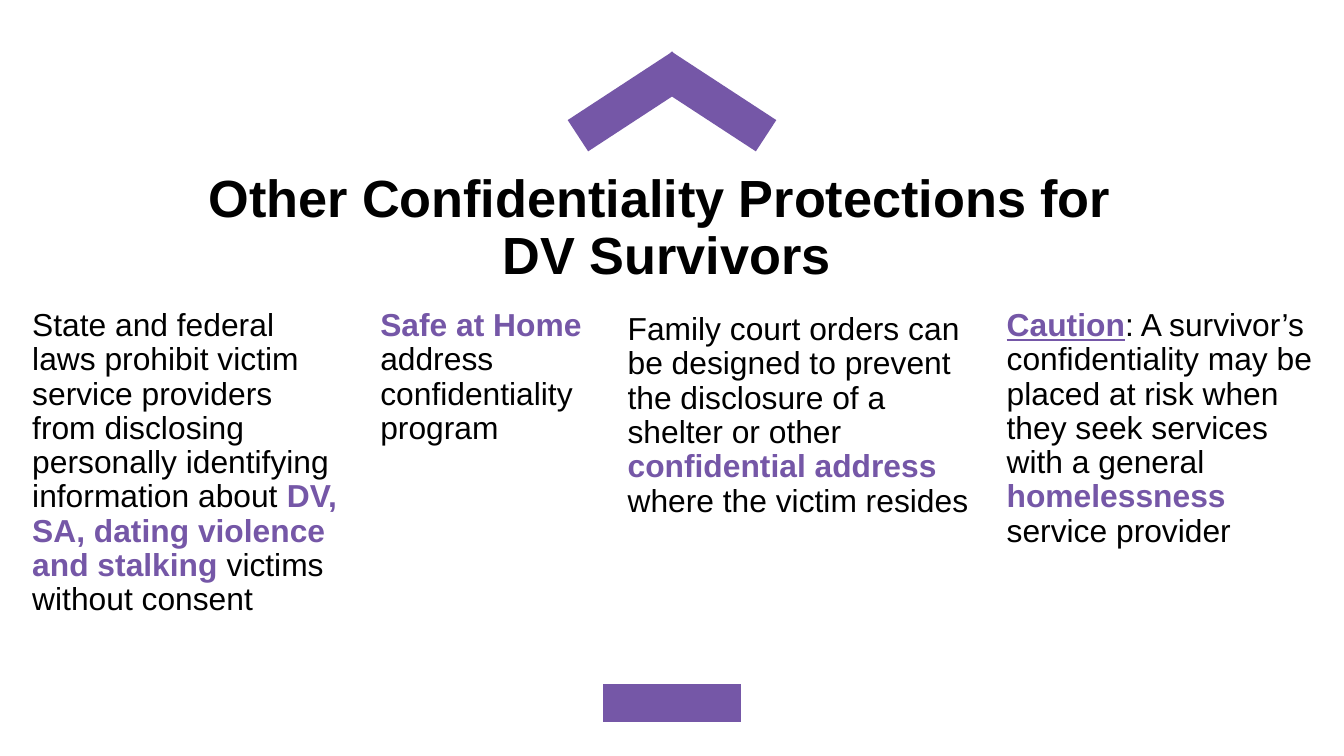
from pptx import Presentation
from pptx import util as u
from pptx.dml.color import RGBColor
from pptx.enum import shapes, text
from pptx.oxml.ns import qn
from lxml import etree

# Content: a run is (text, style)
TITLE = ["Other Confidentiality Protections for ", "DV Survivors"]
COLUMNS = [
    [("State and federal laws prohibit victim service providers from disclosing "
      "personally identifying information about ", "plain"),
     ("DV, SA, dating violence and stalking ", "accent"),
     ("victims without consent", "plain")],
    [("Safe at Home ", "accent"),
     ("address confidentiality program", "plain")],
    [("Family court orders can be designed to prevent the disclosure of a "
      "shelter or other ", "plain"),
     ("confidential address ", "accent"),
     ("where the victim resides", "plain")],
    [("Caution", "warning"),
     (": A survivor’s confidentiality may be placed at risk when they seek "
      "services with a general ", "plain"),
     ("homelessness", "accent"),
     (" service provider", "plain")],
]

# Theme
BLACK, PURPLE = RGBColor(0, 0, 0), RGBColor(0x75, 0x57, 0xA7)
THEME = {
    "font": "Arial",
    "line": {"color": PURPLE, "width": u.Pt(20)},
    "title": {"size": u.Pt(28), "bold": True, "color": BLACK},
    "plain": {"size": u.Pt(17), "bold": False, "color": BLACK},
    "accent": {"size": u.Pt(17), "bold": True, "color": PURPLE},
    "warning": {"size": u.Pt(17), "bold": True, "color": PURPLE, "underline": True},
}
FRAME = {"word_wrap": True, "margin_left": u.Inches(0.07), "margin_right": u.Inches(0.07),
         "margin_top": u.Inches(0.04), "margin_bottom": u.Inches(0.04)}

# Layout in inches, on a 16:9 slide
W = 10
H = W * 9 / 16
MID = W / 2
TITLE_BOX = (0.29, 1.15, 9.34, 1.11)
COL_LEFT = [0.17, 2.76, 4.6, 7.42]
COL_WIDTH = [2.43, 1.84, 2.77, 2.55]
COL_TOP = [2.26, 2.26, 2.29, 2.26]
COL_HEIGHT = [2.87, 2.55, 2.58, 2.72]
PEAK, FOOT, BAR = 0.5, 1.01, 5.23       # heights of the roof and the bar
OVERLAP, REACH, BAR_HALF = 0.08, 0.7, 0.51


def set_all(obj, values):
    for name, value in values.items():
        setattr(obj, name, value)


def add_text(slide, box, anchor=text.MSO_ANCHOR.TOP):
    tf = slide.shapes.add_textbox(*map(u.Inches, box)).text_frame
    set_all(tf, {**FRAME, "vertical_anchor": anchor})
    tf.paragraphs[0].line_spacing = 0.9
    return tf.paragraphs[0]


def add_run(p, words, style):
    r = p.add_run()
    r.text = words
    values = dict(THEME[style], name=THEME["font"])
    r.font.color.rgb = values.pop("color")
    set_all(r.font, values)


def add_line(slide, *ends):
    sp = slide.shapes.add_connector(shapes.MSO_CONNECTOR.STRAIGHT, *map(u.Inches, ends))
    sp.line.color.rgb = THEME["line"]["color"]
    sp.line.width = THEME["line"]["width"]
    etree.SubElement(sp._element.spPr, qn("a:effectLst"))


prs = Presentation()
prs.slide_width, prs.slide_height = u.Inches(W), u.Inches(H)
s = prs.slides.add_slide(prs.slide_layouts[6])

# Roof: two strokes that cross at the peak, then the bar at the foot
for side in (1, -1):
    add_line(s, MID - side * OVERLAP, PEAK, MID + side * REACH, FOOT)
add_line(s, MID - BAR_HALF, BAR, MID + BAR_HALF, BAR)

# Title
p = add_text(s, TITLE_BOX, text.MSO_ANCHOR.MIDDLE)
p.alignment = text.PP_ALIGN.CENTER
for i, row in enumerate(TITLE):
    if i:
        p.add_line_break()
    add_run(p, row, "title")

# Four columns
for *box, runs in zip(COL_LEFT, COL_TOP, COL_WIDTH, COL_HEIGHT, COLUMNS):
    p = add_text(s, box)
    p.space_before = u.Pt(7.5)
    for words, style in runs:
        add_run(p, words, style)

prs.save("out.pptx")
